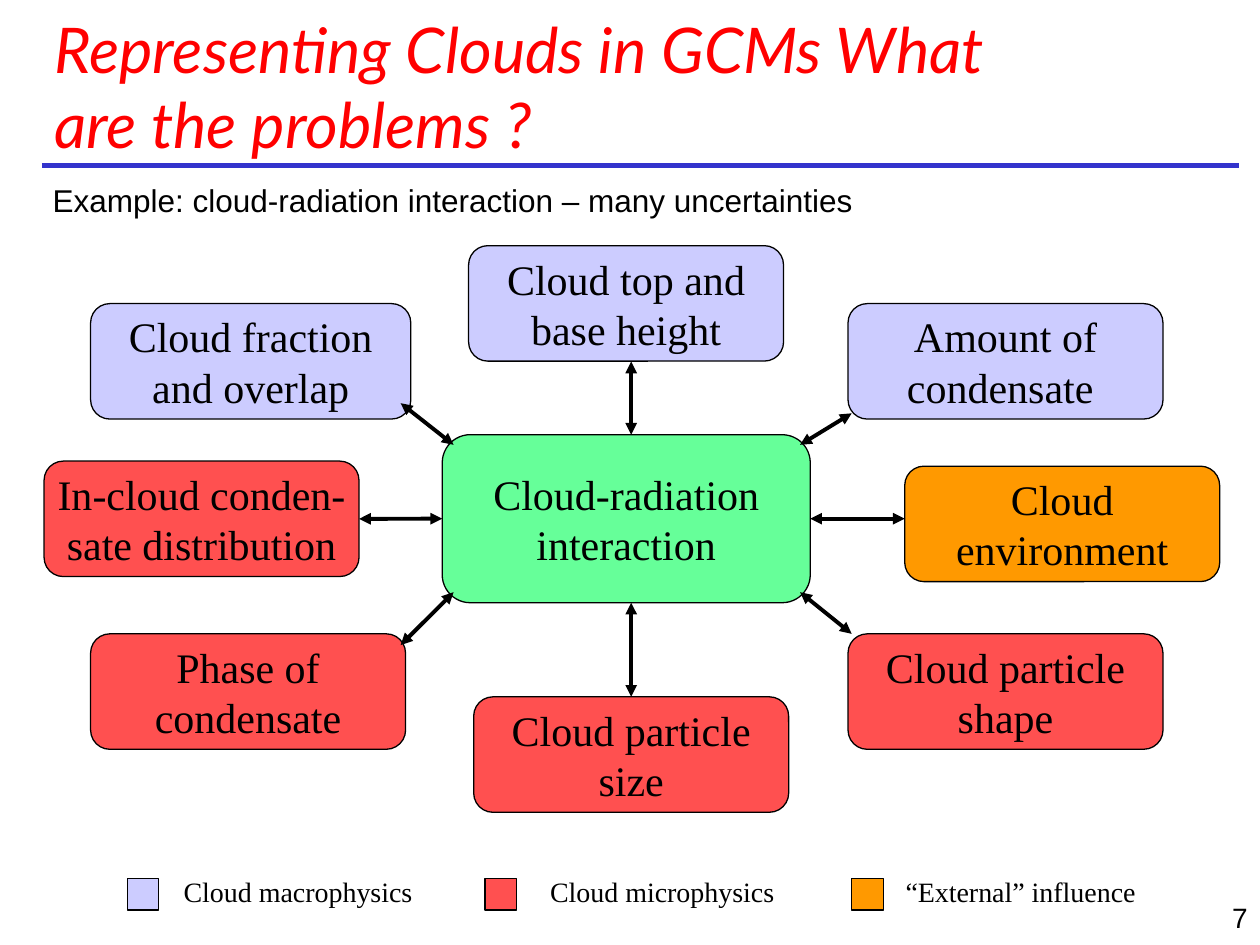
from dataclasses import dataclass
from lxml.etree import SubElement
from pptx import Presentation
from pptx.dml.color import RGBColor
from pptx.enum.shapes import MSO_CONNECTOR as Link, MSO_SHAPE as Shape
from pptx.enum.text import MSO_ANCHOR as Anchor, PP_ALIGN as Align
from pptx.oxml.ns import qn
from pptx.slide import Slide
from pptx.util import Pt

BLACK = RGBColor(0x00, 0x00, 0x00)
RED = RGBColor(0xFF, 0x00, 0x00)
BLUE = RGBColor(0x33, 0x33, 0xCC)
GREEN = RGBColor(0x66, 0xFF, 0x99)
MACRO = RGBColor(0xCC, 0xCC, 0xFF)
MICRO = RGBColor(0xFF, 0x50, 0x50)
OUTER = RGBColor(0xFF, 0x99, 0x00)


@dataclass
class Sketch:
    """Draws styled elements on the current slide, in points."""
    slide: Slide
    serif: str = "Times New Roman"
    sans: str = "Arial"
    head: str = "Lato"

    def fill_text(self, shape, text, size, face, color=BLACK, align=Align.LEFT,
                  anchor=Anchor.TOP, italic=False, wrap=True):
        frame = shape.text_frame
        frame.text = text
        frame.word_wrap = wrap
        frame.vertical_anchor = anchor
        par = frame.paragraphs[0]
        par.alignment = align
        font = par.runs[0].font
        font.size, font.name, font.italic = Pt(size), face, italic
        font.color.rgb = color

    def label(self, text, place, size, face, **style):
        box = self.slide.shapes.add_textbox(*map(Pt, place))
        self.fill_text(box, text, size, face, **style)

    def block(self, kind, place, fill):
        shape = self.slide.shapes.add_shape(kind, *map(Pt, place))
        shape.shadow.inherit = False
        shape.fill.solid()
        shape.fill.fore_color.rgb = fill
        shape.line.color.rgb = BLACK
        shape.line.width = Pt(0.75)
        return shape

    def node(self, text, place, fill):
        shape = self.block(Shape.ROUNDED_RECTANGLE, place, fill)
        frame = shape.text_frame
        frame.margin_left = frame.margin_right = Pt(3.6)
        self.fill_text(shape, text, 24, self.serif, align=Align.CENTER,
                       anchor=Anchor.MIDDLE)
        return shape

    def key(self, text, left, mid, fill):
        self.block(Shape.RECTANGLE, (left, 502, 18, 18), fill)
        self.label(text, (mid - 73, 496, 146, 27), 16, self.serif,
                   align=Align.CENTER, anchor=Anchor.MIDDLE, wrap=False)

    def rule(self, ends, color, width):
        line = self.slide.shapes.add_connector(Link.STRAIGHT, *map(Pt, ends))
        line.line.color.rgb = color
        line.line.width = Pt(width)
        SubElement(line._element.spPr, qn("a:effectLst"))
        return line

    def arrow(self, ends, start=None, stop=None):
        line = self.rule(ends, BLACK, 2.25)
        for tag in ("a:headEnd", "a:tailEnd"):
            SubElement(line._element.spPr.find(qn("a:ln")), qn(tag),
                       type="triangle")
        if start:
            line.begin_connect(*start)
        if stop:
            line.end_connect(*stop)


def main():
    deck = Presentation()
    deck.slide_width, deck.slide_height = Pt(720), Pt(540)
    art = Sketch(deck.slides.add_slide(deck.slide_layouts[6]))

    art.rule((24, 94.5, 708, 94.5), BLUE, 3)
    art.label("7", (570, 511, 150, 36), 16, art.sans, align=Align.RIGHT)
    art.label("Representing Clouds in GCMs What are the problems ?",
              (24, 16, 576, 66), 36, art.head, color=RED,
              anchor=Anchor.MIDDLE, italic=True)
    art.label("Example: cloud-radiation interaction – many uncertainties",
              (23, 100, 589, 29), 18, art.sans)

    core = art.node("Cloud-radiation interaction",
                    (252.7, 248.4, 210.3, 96), GREEN)
    wide, high = 180, 66
    topics = [
        ("Cloud fraction and overlap", 51.8, 173.5, MACRO),
        ("Cloud top and base height", 267.8, 140.4, MACRO),
        ("Amount of condensate ", 484.6, 173.5, MACRO),
        ("In-cloud conden-sate distribution", 25.2, 263.5, MICRO),
        ("Phase of condensate", 51.8, 362.2, MICRO),
        ("Cloud particle size", 270.7, 398.2, MICRO),
        ("Cloud particle shape", 484.6, 362.2, MICRO),
        ("Cloud environment", 517, 266.4, OUTER),
    ]
    nodes = {text: art.node(text, (left, top, wide, high), fill)
             for text, left, top, fill in topics}
    nodes["Cloud fraction and overlap"].width = Pt(183)

    for ends in [(229, 230.4, 259.2, 254.2), (360.7, 206.6, 360.7, 248.4),
                 (486.7, 236.2, 457.2, 254.2), (229, 368.6, 259.2, 338.4),
                 (457.2, 338.4, 486.7, 362.2)]:
        art.arrow(ends)
    art.arrow((205.2, 296.5, 252.7, 296.5),
              (nodes["In-cloud conden-sate distribution"], 3), (core, 1))
    art.arrow((360.7, 344.4, 360.7, 398.2),
              stop=(nodes["Cloud particle size"], 0))
    art.arrow((463, 296.4, 517, 296.4), start=(core, 3))

    for text, left, mid, fill in [
            ("Cloud macrophysics", 72.7, 170.3, MACRO),
            ("Cloud microphysics", 277.2, 378.4, MICRO),
            ("“External” influence", 486.7, 583.2, OUTER)]:
        art.key(text, left, mid, fill)

    deck.save("out.pptx")


if __name__ == "__main__":
    main()
